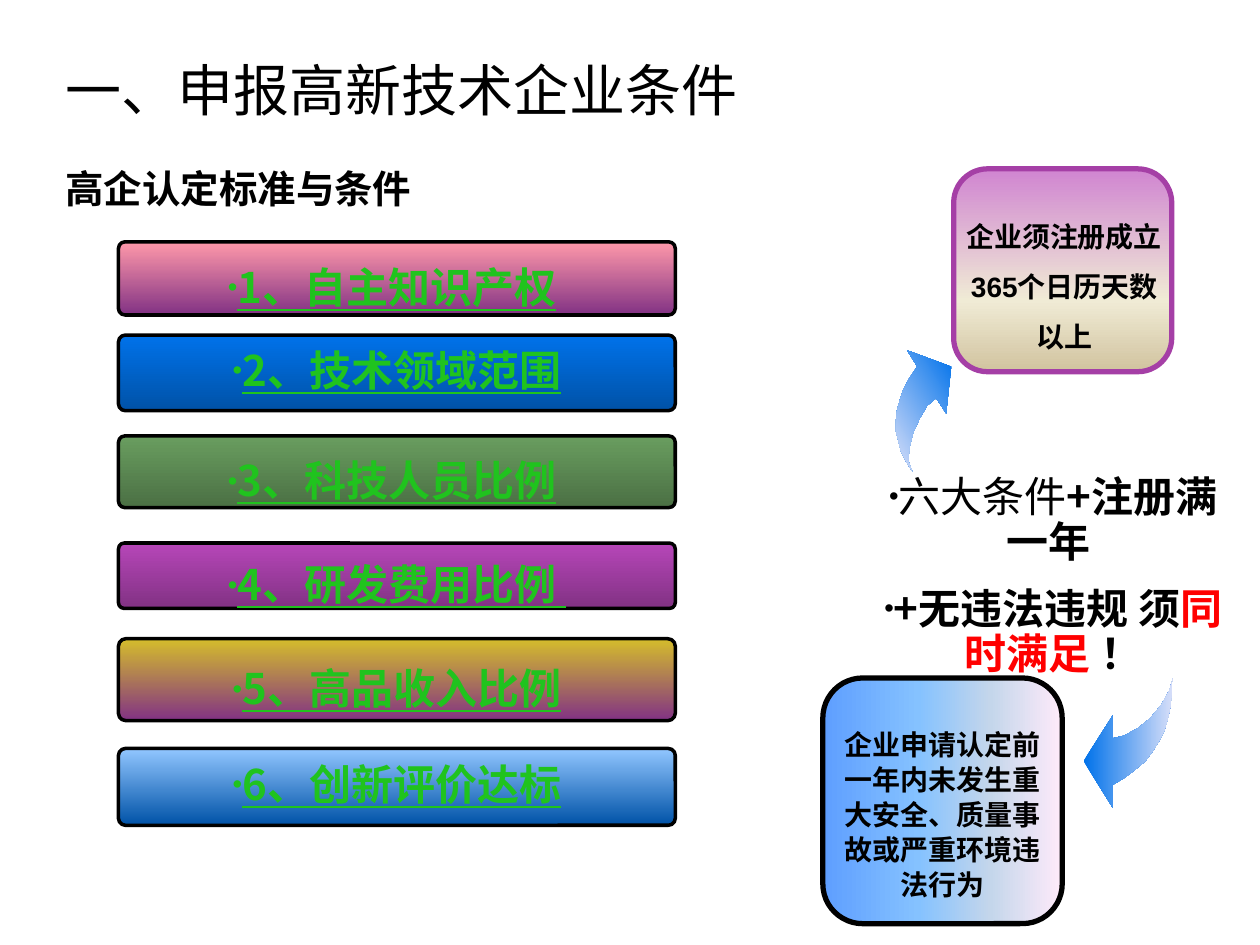
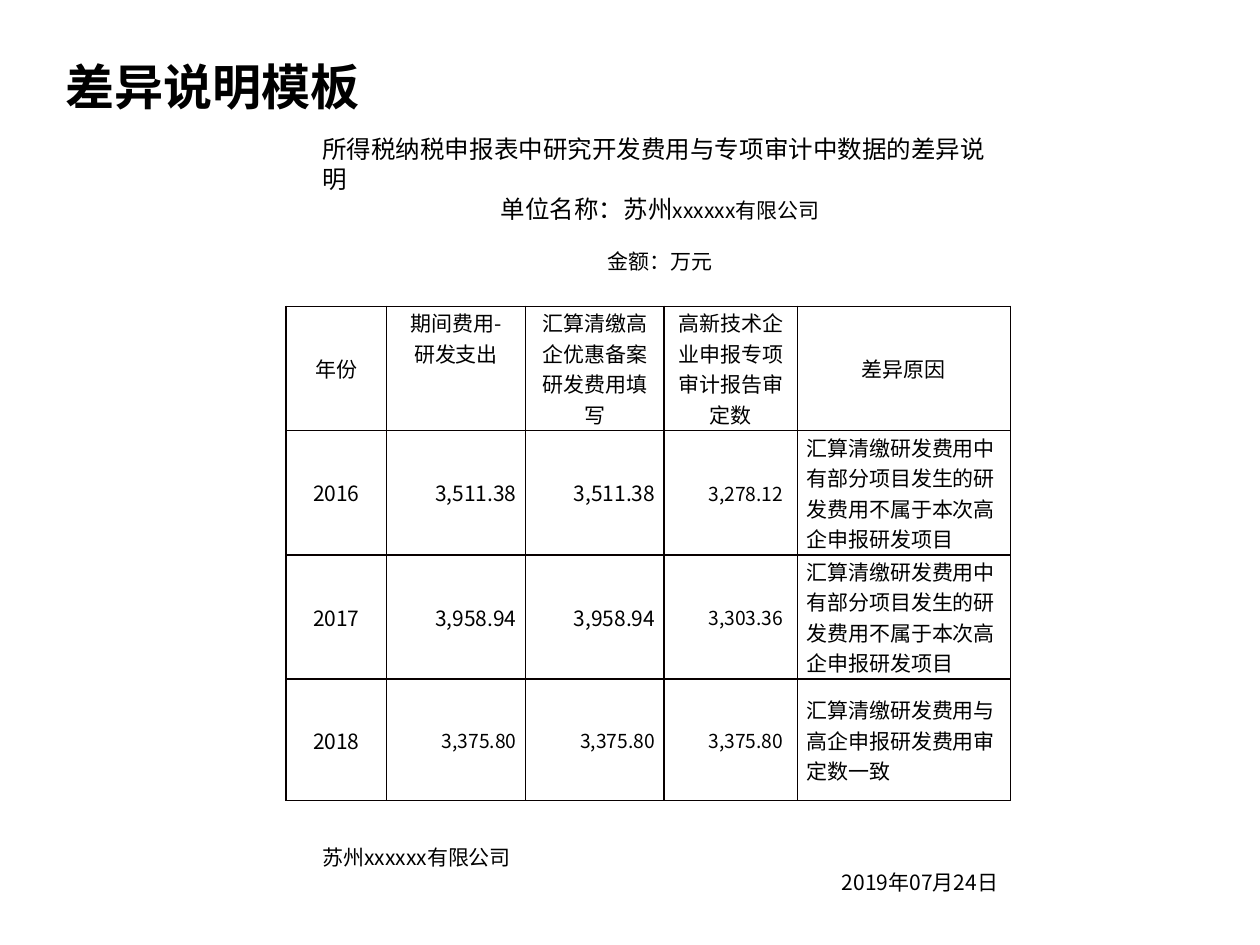
from lxml import etree
from pptx import Presentation
from pptx.dml.color import RGBColor
from pptx.enum.shapes import MSO_SHAPE
from pptx.enum.text import MSO_ANCHOR, MSO_AUTO_SIZE, PP_ALIGN
from pptx.oxml.ns import qn
from pptx.util import Pt

LEFT, CENTER, RIGHT = PP_ALIGN.LEFT, PP_ALIGN.CENTER, PP_ALIGN.RIGHT
TOP, MIDDLE, BOTTOM = MSO_ANCHOR.TOP, MSO_ANCHOR.MIDDLE, MSO_ANCHOR.BOTTOM
ROUNDED = MSO_SHAPE.ROUNDED_RECTANGLE
NO_FIT = MSO_AUTO_SIZE.NONE
SANS, ARIAL = "Noto Sans CJK SC", "Arial"
BLACK, GREEN, RED = "000000", "20C31E", "FF0000"
BORDER = "080000"
ARROW_STOPS = [(0, "0072EA"), (100, "D8DFF9")]


def style(paragraph, size, font=SANS, color=BLACK, bold=False, align=LEFT, spacing=None, bullet=None):
    paragraph.alignment = align
    paragraph.line_spacing = spacing
    properties = paragraph._p.get_or_add_pPr()
    properties.set("marL", "0")
    properties.set("indent", "0")
    if bullet:
        etree.SubElement(properties, qn("a:buSzPct"), val="65000")
        etree.SubElement(properties, qn("a:buFont"), typeface=ARIAL)
        etree.SubElement(properties, qn("a:buChar"), char=bullet)
    else:
        etree.SubElement(properties, qn("a:buNone"))
    paragraph.font.size = Pt(size)
    paragraph.font.bold = bold
    paragraph.font.color.rgb = RGBColor.from_string(color)
    paragraph.font.name = font
    etree.SubElement(properties.find(qn("a:defRPr")), qn("a:ea"), typeface=SANS)


def paint(shape, stops, angle, line_width=0, line_color=BLACK):
    shape.shadow.inherit = False
    shape.fill.gradient()
    shape.fill.gradient_angle = (360 - angle) % 360
    stop_list = shape._element.spPr.find(qn("a:gradFill")).find(qn("a:gsLst"))
    for old_stop in list(stop_list):
        stop_list.remove(old_stop)
    for position, color in stops:
        stop = etree.SubElement(stop_list, qn("a:gs"), pos=str(position * 1000))
        etree.SubElement(stop, qn("a:srgbClr"), val=color)
    if line_width:
        shape.line.width = Pt(line_width)
        shape.line.color.rgb = RGBColor.from_string(line_color)
    else:
        shape.line.fill.background()


deck = Presentation()
deck.slide_width, deck.slide_height = Pt(720), Pt(540)
conditions = deck.slides.add_slide(deck.slide_layouts[1])
differences = deck.slides.add_slide(deck.slide_layouts[5])

for slide, heading, size, font, bold in [
    (conditions, "一、申报高新技术企业条件", 32, ARIAL, False),
    (differences, "差异说明模板", 28, SANS, True),
]:
    title = slide.shapes.title
    title.left, title.top, title.width, title.height = Pt(30.2), Pt(36), Pt(609.8), Pt(76.3)
    title.text = heading
    title.text_frame.vertical_anchor = TOP
    title.text_frame.auto_size = NO_FIT
    title.text_frame.margin_top = 0
    style(title.text_frame.paragraphs[0], size, font, bold=bold, spacing=0.9)

subtitle = conditions.placeholders[1]
subtitle.left, subtitle.top, subtitle.width, subtitle.height = Pt(30.2), Pt(97.2), Pt(633.6), Pt(346.3)
subtitle.text = "高企认定标准与条件"
subtitle.text_frame.auto_size = NO_FIT
subtitle.text_frame.margin_top = 0
subtitle.text_frame.paragraphs[0].space_before = Pt(0)
style(subtitle.text_frame.paragraphs[0], 22, ARIAL, bold=True, spacing=0.9)

for top, height, label, tail, start, end, lowered in [
    (138.2, 41.8, "1、自主知识产权", " ", "FF99AA", "823284", True),
    (191.5, 43.2, "2、技术领域范围", "", "0072EA", "0052A7", False),
    (249.1, 41, "3、科技人员比例", " ", "699D5F", "4B7044", True),
    (310.3, 37.4, "4、研发费用比例 ", "", "B646B8", "823284", True),
    (365, 46.8, "5、高品收入比例", "", "D5BD2B", "823284", True),
    (427.7, 43.9, "6、创新评价达标", "", "91C6FF", "0052A7", False),
]:
    bar = conditions.shapes.add_shape(ROUNDED, Pt(67.7), Pt(top), Pt(318.2), Pt(height))
    bar.adjustments[0] = 0.09
    paint(bar, [(0, start), (100, end)], 90, 2)
    frame = bar.text_frame
    frame.word_wrap = False
    frame.vertical_anchor = MIDDLE
    if lowered:
        frame.margin_top, frame.margin_bottom = Pt(10), Pt(-3)
    criterion = frame.paragraphs[0]
    style(criterion, 24, color=GREEN, bold=True, align=CENTER, spacing=0.9, bullet="•")
    criterion.font.underline = True
    criterion.add_run().text = label
    if tail:
        spacer = criterion.add_run()
        spacer.text = tail
        spacer.font.underline = False

for card_box, stops, angle, outline, note_box, note, spacing in [
    ((545, 96.5, 124.6, 115.9), [(0, "D085D1"), (65, "F0EBD5"), (100, "D1C39F")], 90, "A53FA6",
     (543.6, 112.3, 128.9, 94.3), "企业须注册成立365个日历天数以上", 28.6),
    ((470.2, 387.4, 136.8, 140.4), [(0, "5E9EFF"), (40, "85C2FF"), (70, "C4D6EB"), (100, "FFEBFA")], 0, BLACK,
     (470.2, 411.1, 136.8, 108), "企业申请认定前一年内未发生重大安全、质量事故或严重环境违法行为", 20),
]:
    card = conditions.shapes.add_shape(ROUNDED, *map(Pt, card_box))
    paint(card, stops, angle, 3, outline)
    requirement = conditions.shapes.add_textbox(*map(Pt, note_box))
    requirement.text_frame.word_wrap = True
    requirement.text_frame.text = note
    style(requirement.text_frame.paragraphs[0], 16, ARIAL, bold=True, align=CENTER, spacing=Pt(spacing))

up_arrow = [
    (521.3, 269.3), (517.7, 263.5), (514.8, 257.8), (513.4, 252), (511.9, 246.2), (511.9, 240.5),
    (512.6, 234.7), (514.1, 229), (516.2, 222.5), (519.8, 216), (524.2, 209.5), (518.4, 200.2),
    (543.6, 209.5), (540.7, 236.2), (535, 227.5), (529.9, 231.8), (525.6, 239), (522, 247),
    (519.8, 255.6), (519.1, 263.5),
]
down_arrow = [
    (670.3, 387.4), (668.9, 403.2), (667.4, 410.4), (665.3, 417.6), (662.4, 423.4), (658.8, 429.1),
    (654.5, 434.9), (649.4, 439.2), (643, 444.2), (635.8, 448.6), (635.8, 461.5), (619.2, 434.9),
    (635.8, 409), (635.8, 421.9), (642.2, 420.5), (650.2, 416.2), (657.4, 410.4), (663.8, 402.5),
    (668.2, 394.6),
]
for outline, angle in [(up_arrow, 148), (down_arrow, 0)]:
    points = [(Pt(x), Pt(y)) for x, y in outline]
    builder = conditions.shapes.build_freeform(*points[0])
    builder.add_line_segments(points[1:], close=True)
    paint(builder.convert_to_shape(), ARROW_STOPS, angle)

summary = conditions.shapes.add_shape(ROUNDED, Pt(488.9), Pt(249.1), Pt(226), Pt(104.4))
summary.adjustments[0] = 0.09
summary.shadow.inherit = False
summary.fill.background()
summary.line.fill.background()
frame = summary.text_frame
frame.word_wrap = True
frame.vertical_anchor = TOP
frame.margin_top = Pt(20)
for index, pieces in enumerate([
    [("六大条件", False, BLACK), ("+注册满一年 ", True, BLACK)],
    [("+无违法违规 须", True, BLACK), ("同时满足 ", True, RED), ("！", True, BLACK)],
]):
    rule = frame.add_paragraph() if index else frame.paragraphs[0]
    rule.space_before = Pt(12.6 * index)
    style(rule, 24, align=CENTER, spacing=Pt(25.7), bullet="•")
    for text, bold, color in pieces:
        run = rule.add_run()
        run.text = text
        run.font.bold = bold
        run.font.color.rgb = RGBColor.from_string(color)

same_reason = "汇算清缴研发费用中有部分项目发生的研发费用不属于本次高企申报研发项目"
rows = [
    ["年份", "期间费用-\v研发支出", "汇算清缴高企优惠备案研发费用填写", "高新技术企业申报专项审计报告审定数", "差异原因"],
    ["2016", "3,511.38", "3,511.38", "3,278.12", same_reason],
    ["2017", "3,958.94", "3,958.94", "3,303.36", same_reason],
    ["2018", "3,375.80", "3,375.80", "3,375.80", "汇算清缴研发费用与高企申报研发费用审定数一致"],
]
expenses = differences.shapes.add_table(4, 5, Pt(163.4), Pt(175), Pt(414), Pt(278)).table
expenses.first_row = expenses.horz_banding = False
for column, width in zip(expenses.columns, [57.6, 79.2, 79.2, 76.3, 121.7]):
    column.width = Pt(width)
for r, values in enumerate(rows):
    expenses.rows[r].height = Pt(69.5)
    for c, value in enumerate(values):
        cell = expenses.cell(r, c)
        cell.text = value
        cell.fill.background()
        cell.margin_left = cell.margin_right = Pt(5)
        cell.margin_top = cell.margin_bottom = Pt(0.7)
        cell.vertical_anchor = TOP if (r, c) == (0, 1) else MIDDLE
        is_amount = r > 0 and 1 <= c <= 3
        if is_amount and c == 3:
            cell.margin_right = Pt(8)
        align = CENTER if r == 0 or c == 0 else RIGHT if is_amount else LEFT
        style(cell.text_frame.paragraphs[0], 11 if is_amount and (c == 3 or r == 3) else 12, align=align)
        cell_properties = cell._tc.get_or_add_tcPr()
        for position, side in enumerate(["a:lnL", "a:lnR", "a:lnT", "a:lnB"]):
            edge = etree.Element(qn(side), w=str(Pt(1)))
            edge_fill = etree.SubElement(edge, qn("a:solidFill"))
            etree.SubElement(edge_fill, qn("a:srgbClr"), val=BORDER)
            cell_properties.insert(position, edge)

for top, height, anchor, lines in [
    (72.7, 85, TOP, [
        ([("所得税纳税申报表中研究开发费用与专项审计中数据的差异说明", 14)], ARIAL, LEFT, 17.1, 0),
        ([("单位名称：苏州", 14), ("xxxxxx有限公司", 12)], SANS, CENTER, 17.1, 0),
        ([("金额：万元", 12)], SANS, CENTER, 17.1, 12),
    ]),
    (406.1, 108.7, BOTTOM, [
        ([("苏州xxxxxx有限公司", 12)], SANS, LEFT, 14.3, 0),
        ([("2019年07月24日", 12)], SANS, RIGHT, 14.3, 0),
    ]),
]:
    frame = differences.shapes.add_textbox(Pt(177.1), Pt(top), Pt(400.3), Pt(height)).text_frame
    frame.word_wrap = True
    frame.vertical_anchor = anchor
    for index, (pieces, font, align, spacing, before) in enumerate(lines):
        line = frame.add_paragraph() if index else frame.paragraphs[0]
        line.space_before = Pt(before)
        style(line, pieces[0][1], font, align=align, spacing=Pt(spacing))
        for text, size in pieces:
            run = line.add_run()
            run.text = text
            if size != pieces[0][1]:
                run.font.size = Pt(size)

deck.save("out.pptx")
